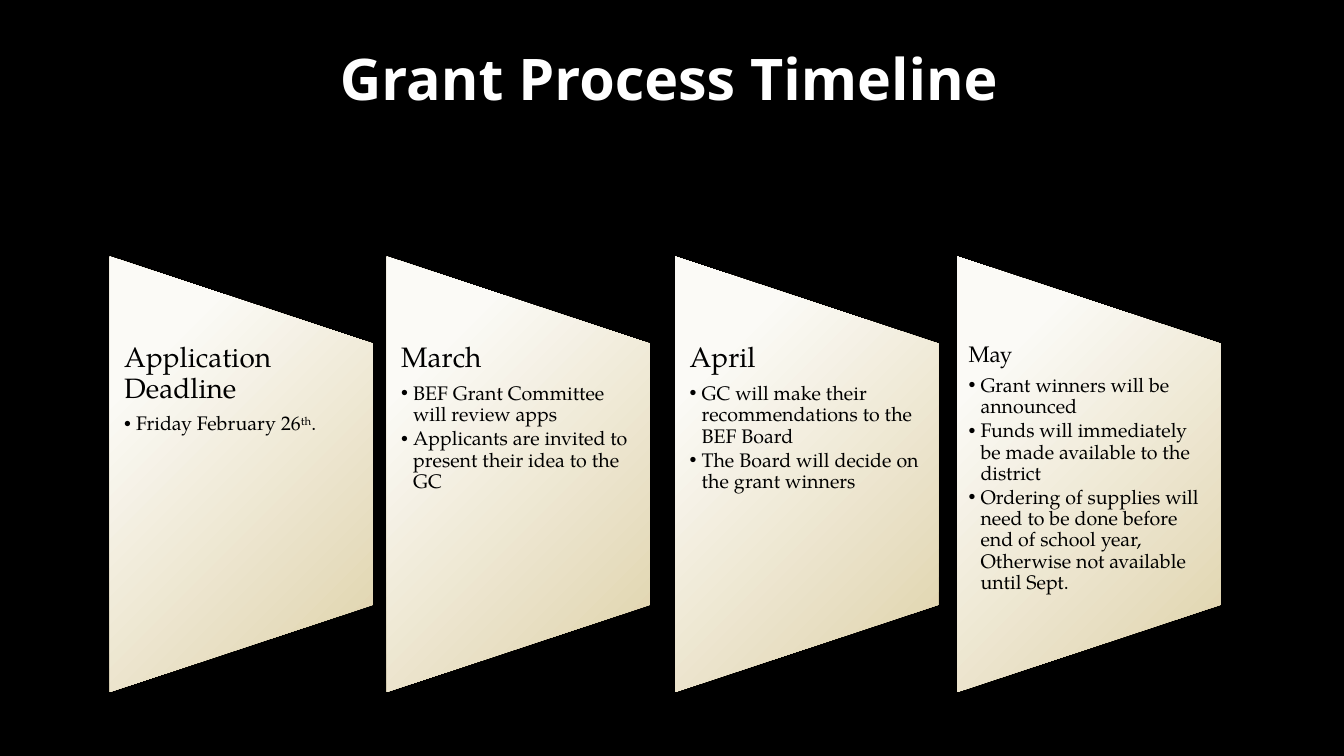
"""Build the grant process timeline slide."""
from pptx import Presentation, oxml
from pptx import util as u
from pptx.dml.color import RGBColor
from pptx.enum import shapes, text
from pptx.oxml import ns

BLACK = RGBColor(0x00, 0x00, 0x00)
WHITE = RGBColor(0xFF, 0xFF, 0xFF)
CREAM = RGBColor(0xFB, 0xFA, 0xF6)
SAND = RGBColor(0xDE, 0xD1, 0xA8)
TITLE_FONT = "Open Sans"
BODY_FONT = "TeX Gyre Pagella"
PANEL_W, PANEL_H = u.Cm(6.63), u.Cm(10.97)
PANEL_MIDDLE = u.Cm(11.95)

STAGES = [
    (2.77, 0.36, 20, "Application Deadline", [["Friday February 26", "^th", "."]]),
    (9.75, 0.36, 20, "March", [
        ["BEF Grant Committee will review apps"],
        ["Applicants are invited to present their idea to the GC"]]),
    (17.02, 0.36, 20, "April", [
        ["GC will make their recommendations to the BEF Board"],
        ["The Board will decide on the grant winners"]]),
    (24.13, 0.28, 16, "May", [
        ["Grant winners will be announced"],
        ["Funds will immediately be made available to the district"],
        ["Ordering of supplies will need to be done before end of school year, "
         "Otherwise not available until Sept."]]),
]


def place(sp, left, top, width, height):
    """Move and size a shape."""
    sp.left, sp.top, sp.width, sp.height = left, top, width, height


def add_text(p, content, size, font=BODY_FONT, color=BLACK, bold=False):
    """Add a formatted run; a leading caret makes it superscript."""
    r = p.add_run()
    r.text = content.lstrip("^")
    r.font.size, r.font.name, r.font.bold = u.Pt(size), font, bold
    r.font.color.rgb = color
    if content.startswith("^"):
        r.font._element.set("baseline", "30000")


def format_paragraph(p, size, after, bullet=False):
    """Set spacing, alignment and the bullet of a paragraph."""
    p.level = int(bullet)
    p.alignment = text.PP_ALIGN.LEFT
    p.line_spacing = 0.9
    p.space_before = u.Pt(0)
    p.space_after = u.Pt(size * after)
    indent = u.Cm(0.3) if bullet else 0
    pPr = p._p.get_or_add_pPr()
    pPr.set("marL", str(indent))
    pPr.set("indent", str(-indent))
    mark = '<a:buChar %s char="•"/>' if bullet else "<a:buNone %s/>"
    pPr.append(oxml.parse_xml(mark % ns.nsdecls("a")))


def set_frame(tf, anchor, inset):
    """Set wrapping, anchoring and insets of a text frame."""
    tf.word_wrap = True
    tf.auto_size = text.MSO_AUTO_SIZE.NONE
    tf.vertical_anchor = anchor
    tf.margin_left = tf.margin_right = inset
    tf.margin_top = tf.margin_bottom = 0


def fill_gradient(sp):
    """Fill a shape with a circular gradient from its top left corner."""
    sp.fill.solid()
    solid = sp._element.spPr.find(ns.qn("a:solidFill"))
    grad = oxml.parse_xml(
        f'<a:gradFill {ns.nsdecls("a")} rotWithShape="0"><a:gsLst>'
        f'<a:gs pos="20000"><a:srgbClr val="{CREAM}"/></a:gs>'
        f'<a:gs pos="100000"><a:srgbClr val="{SAND}"/></a:gs></a:gsLst>'
        '<a:path path="circle"><a:fillToRect l="-15000" t="-15000" '
        'r="115000" b="115000"/></a:path></a:gradFill>')
    solid.getparent().replace(solid, grad)


def add_panel(s, left, body):
    """Add a turned trapezoid behind its text."""
    sp = s.shapes.add_shape(
        shapes.MSO_SHAPE.FLOWCHART_MANUAL_OPERATION,
        left + (PANEL_W - PANEL_H) // 2, PANEL_MIDDLE - PANEL_W // 2,
        PANEL_H, PANEL_W)
    sp.rotation = 270
    sp.shadow.inherit = False
    sp.line.fill.background()
    fill_gradient(sp)
    body._element.addprevious(sp._element)


def add_stage(s, body, left, inset, size, heading, items):
    """Fill one stage: panel, heading and bullets."""
    add_panel(s, u.Cm(left), body)
    place(body, u.Cm(left), u.Cm(8.66), PANEL_W, u.Cm(6.58))
    tf = body.text_frame
    set_frame(tf, text.MSO_ANCHOR.TOP, u.Cm(inset))
    p = tf.paragraphs[0]
    format_paragraph(p, size, 0.35)
    add_text(p, heading, size)
    for item in items:
        p = tf.add_paragraph()
        format_paragraph(p, 14, 0.15, bullet=True)
        for part in item:
            add_text(p, part, 14)


def add_title(s, content):
    """Fill the title placeholder."""
    sp = s.shapes.title
    place(sp, u.Cm(3.86), u.Cm(0.79), u.Cm(26.01), u.Cm(2.34))
    set_frame(sp.text_frame, text.MSO_ANCHOR.MIDDLE, u.Cm(0.25))
    p = sp.text_frame.paragraphs[0]
    p.alignment = text.PP_ALIGN.CENTER
    add_text(p, content, 41, font=TITLE_FONT, color=WHITE, bold=True)


def main():
    """Build and save the slide."""
    prs = Presentation()
    prs.slide_width, prs.slide_height = u.Cm(33.87), u.Cm(19.05)
    s = prs.slides.add_slide(prs.slide_layouts.get_by_name("Comparison"))
    s.background.fill.solid()
    s.background.fill.fore_color.rgb = BLACK
    add_title(s, "Grant Process Timeline")
    bodies = list(s.placeholders)[1:]
    for body, stage in zip(bodies, STAGES):
        add_stage(s, body, *stage)
    prs.save("out.pptx")


if __name__ == "__main__":
    main()
